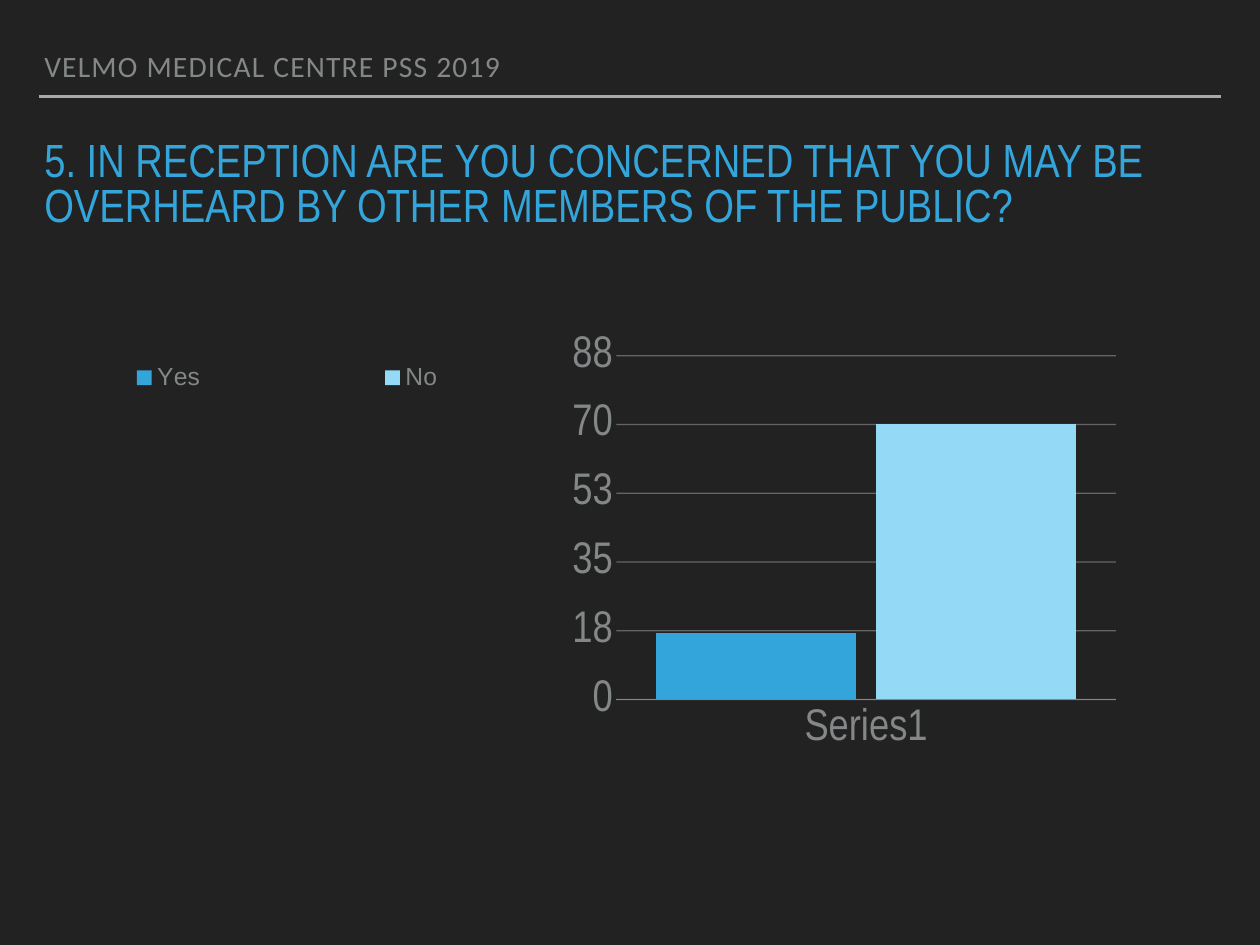
from lxml.etree import SubElement
from pptx import Presentation
from pptx.chart.data import CategoryChartData
from pptx.dml.color import RGBColor
from pptx.enum.chart import XL_CHART_TYPE as ChartType
from pptx.enum.chart import XL_LEGEND_POSITION as LegendPosition
from pptx.enum.chart import XL_TICK_LABEL_POSITION as LabelPosition
from pptx.enum.chart import XL_TICK_MARK as TickMark
from pptx.enum.shapes import MSO_CONNECTOR as Connector
from pptx.enum.text import MSO_ANCHOR as Anchor
from pptx.enum.text import MSO_AUTO_SIZE as AutoSize
from pptx.enum.text import PP_ALIGN as Align
from pptx.oxml.ns import qn
from pptx.util import Inches, Pt

BACKGROUND, GREY, RULE_GREY = "222222", "838787", "A6AAA9"
BLUE, LIGHT_BLUE = "34A5DA", "94D9F6"


def color(hex_string):
    return RGBColor.from_string(hex_string)


def style_font(font, name, size, hex_string):
    font.name, font.size, font.bold = name, Pt(size), False
    font.color.rgb = color(hex_string)


def style_line(line, hex_string, width):
    line.color.rgb = color(hex_string)
    line.width = Pt(width)


def add_rule(slide, left, right, top):
    rule = slide.shapes.add_connector(
        Connector.STRAIGHT, Inches(left), Inches(top), Inches(right), Inches(top))
    style_line(rule.line, RULE_GREY, 2)
    SubElement(rule._element.spPr, qn("a:effectLst"))


def fill_placeholder(shape, box, text, font, anchor, space_before=0, spacing=None):
    shape.left, shape.top, shape.width, shape.height = map(Inches, box)
    frame = shape.text_frame
    frame.text = text
    frame.word_wrap = True
    frame.auto_size = AutoSize.NONE
    frame.vertical_anchor = anchor
    frame.margin_left = frame.margin_right = Inches(0.06)
    frame.margin_top = frame.margin_bottom = Inches(0.06)
    paragraph = frame.paragraphs[0]
    paragraph.alignment = Align.LEFT
    paragraph.line_spacing = 0.8
    paragraph.space_before = Pt(space_before)
    properties = paragraph._p.get_or_add_pPr()
    properties.set("marL", "0")
    properties.set("indent", "0")
    SubElement(properties, qn("a:buNone"))
    run = paragraph.runs[0]
    style_font(run.font, *font)
    if spacing:
        run._r.get_or_add_rPr().set("spc", str(spacing * 100))


def set_layout(parent, position, x, y, width, height, inner=False):
    """Place a chart part by fractions of the chart area."""
    for old in parent.findall(qn("c:layout")):
        parent.remove(old)
    layout = parent.makeelement(qn("c:layout"))
    parent.insert(position, layout)
    manual = SubElement(layout, qn("c:manualLayout"))
    settings = [("xMode", "edge"), ("yMode", "edge"),
                ("x", x), ("y", y), ("w", width), ("h", height)]
    if inner:
        settings.insert(0, ("layoutTarget", "inner"))
    for tag, value in settings:
        SubElement(manual, qn(f"c:{tag}")).set("val", str(value))


def style_axes(chart):
    for axis in (chart.category_axis, chart.value_axis):
        axis.major_tick_mark = axis.minor_tick_mark = TickMark.NONE
        style_font(axis.tick_labels.font, "Arial Narrow", 36, GREY)
    chart.category_axis.tick_label_position = LabelPosition.LOW
    style_line(chart.category_axis.format.line, GREY, 1)

    value_axis = chart.value_axis
    value_axis.minimum_scale, value_axis.maximum_scale = 0, 87.5
    value_axis.major_unit = 17.5
    value_axis.tick_labels.number_format = "0"
    value_axis.tick_labels.number_format_is_linked = False
    value_axis.format.line.fill.background()
    grid_line = value_axis.major_gridlines.format.line
    style_line(grid_line, RULE_GREY, 1)
    grid_color = value_axis._element.find(qn("c:majorGridlines")).find(
        ".//" + qn("a:srgbClr"))
    SubElement(grid_color, qn("a:alpha")).set("val", "50000")


def add_answer_chart(slide, box, answers):
    data = CategoryChartData()
    data.categories = ["Series1"]
    for name, value, _ in answers:
        data.add_series(name, [value])
    chart = slide.shapes.add_chart(
        ChartType.COLUMN_CLUSTERED, *map(Inches, box), data).chart
    chart.has_title = False
    style_font(chart.font, "Roboto", 10, BACKGROUND)
    style_axes(chart)

    # Bars
    plot = chart.plots[0]
    plot.gap_width, plot.overlap = 40, -10
    plot.vary_by_categories = False
    for series, (_, _, fill) in zip(plot.series, answers):
        series.format.fill.solid()
        series.format.fill.fore_color.rgb = color(fill)
        series.format.line.fill.background()

    # Legend to the left of the plot
    chart.has_legend = True
    legend = chart.legend
    legend.position = LegendPosition.LEFT
    legend.include_in_layout = True
    style_font(legend.font, "Arial", 20, GREY)
    set_layout(legend._element, 1, 0, 0.096, 0.563, 0.096)
    plot_area = chart._chartSpace.chart.plotArea
    set_layout(plot_area, 0, 0.565, 0.096, 0.43, 0.751, inner=True)


def main():
    presentation = Presentation()
    presentation.slide_width = Inches(14.22)
    presentation.slide_height = Inches(10.67)
    slide = presentation.slides.add_slide(presentation.slide_layouts[1])
    slide.background.fill.solid()
    slide.background.fill.fore_color.rgb = color(BACKGROUND)

    # Header and question
    add_rule(slide, 0.44, 13.78, 1.09)
    fill_placeholder(slide.placeholders[1], (0.44, 0.5, 12.22, 0.5),
                     "VELMO MEDICAL CENTRE PSS 2019",
                     ("Calibri", 24, GREY), Anchor.BOTTOM, spacing=1)
    fill_placeholder(slide.shapes.title, (0.44, 1.54, 13.33, 1.31),
                     "5. IN RECEPTION ARE YOU CONCERNED THAT YOU MAY BE "
                     "OVERHEARD BY OTHER MEMBERS OF THE PUBLIC?",
                     ("Arial Narrow", 37.8, BLUE), Anchor.TOP, space_before=15)

    # Answers
    add_answer_chart(slide, (-0.45, 3.52, 13.11, 5.17),
                     [("Yes", 17, BLUE), ("No", 70, LIGHT_BLUE)])
    presentation.save("out.pptx")


if __name__ == "__main__":
    main()
